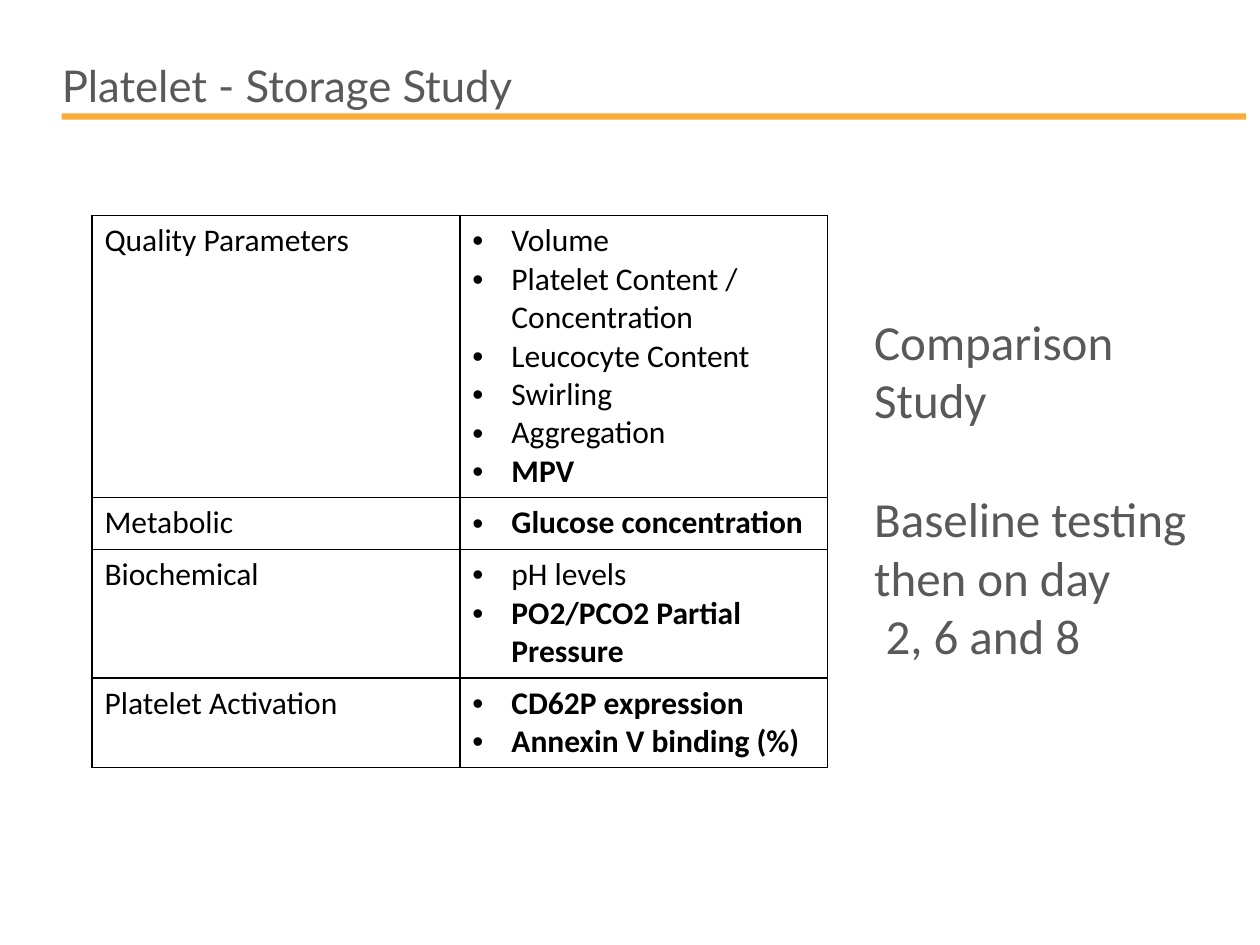
from lxml.etree import SubElement
from pptx import Presentation
from pptx.dml.color import RGBColor
from pptx.enum.shapes import MSO_SHAPE
from pptx.enum.text import MSO_ANCHOR, MSO_AUTO_SIZE, PP_ALIGN
from pptx.oxml.ns import qn
from pptx.util import Inches, Pt

BLACK = RGBColor(0x00, 0x00, 0x00)
GREY = RGBColor(0x59, 0x59, 0x59)
ORANGE = RGBColor(0xF8, 0xAC, 0x39)


def write(paragraph, text, size=18, font="Calibri", color=BLACK, bold=False,
          bullet=False, indent=0, before=0, spacing=None):
    props = paragraph._p.get_or_add_pPr()
    if bullet:
        props.set("marL", str(Inches(0.31)))
        props.set("indent", str(-Inches(0.31)))
        SubElement(props, qn("a:buFont"), typeface="Arial")
        SubElement(props, qn("a:buChar"), char="•")
    elif indent:
        props.set("marL", str(Inches(indent)))
    paragraph.alignment = PP_ALIGN.LEFT
    if before:
        paragraph.space_before = Pt(before)
    if spacing:
        paragraph.line_spacing = Pt(spacing)
    run = paragraph.add_run()
    run.text = text
    run.font.size = Pt(size)
    run.font.name = font
    run.font.bold = bold
    run.font.color.rgb = color


def outline(cell):
    """Give the cell no fill and a black 1 pt line on every side."""
    props = cell._tc.get_or_add_tcPr()
    for side in ("a:lnL", "a:lnR", "a:lnT", "a:lnB"):
        line = SubElement(props, qn(side), w=str(Pt(1)))
        fill = SubElement(line, qn("a:solidFill"))
        SubElement(fill, qn("a:srgbClr"), val=str(BLACK))
    cell.fill.background()


prs = Presentation()
prs.slide_width = Inches(10)
prs.slide_height = Inches(7.5)
slide = prs.slides.add_slide(prs.slide_layouts[5])

# Title and rule
title = slide.shapes.title
title.left, title.top = Inches(0.49), Inches(0.39)
title.width, title.height = Inches(8.74), Inches(0.45)
heading = title.text_frame
heading.auto_size = MSO_AUTO_SIZE.NONE
heading.vertical_anchor = MSO_ANCHOR.TOP
heading.margin_left = heading.margin_right = 0
heading.margin_top = heading.margin_bottom = 0
write(heading.paragraphs[0], "Platelet - Storage Study", size=25, font="Lato",
      color=GREY, spacing=35.3)

rule = slide.shapes.add_shape(MSO_SHAPE.RECTANGLE, Inches(0.49), Inches(0.9),
                              Inches(9.4), Inches(0.05))
rule.shadow.inherit = False
rule.fill.solid()
rule.fill.fore_color.rgb = ORANGE
rule.line.fill.background()

# Parameter table: category, row height, (measure, bold)
categories = [
    ("Quality Parameters", 2.24, [
        ("Volume", False), ("Platelet Content / Concentration", False),
        ("Leucocyte Content", False), ("Swirling", False),
        ("Aggregation", False), ("MPV", True)]),
    ("Metabolic", 0.41, [("Glucose concentration", True)]),
    ("Biochemical", 1.02, [
        ("pH levels", False), ("PO2/PCO2 Partial Pressure", True)]),
    ("Platelet Activation", 0.71, [
        ("CD62P expression", True), ("Annexin V binding (%)", True)]),
]
total_height = sum(height for _, height, _ in categories)
parameters = slide.shapes.add_table(
    len(categories), 2, Inches(0.73), Inches(1.71),
    Inches(5.84), Inches(total_height)).table
parameters.first_row = False
parameters.horz_banding = False

for row, (category, height, measures) in enumerate(categories):
    parameters.rows[row].height = Inches(height)
    category_cell = parameters.cell(row, 0)
    measure_cell = parameters.cell(row, 1)
    outline(category_cell)
    outline(measure_cell)
    write(category_cell.text_frame.paragraphs[0], category)
    frame = measure_cell.text_frame
    for i, (measure, bold) in enumerate(measures):
        paragraph = frame.add_paragraph() if i else frame.paragraphs[0]
        write(paragraph, measure, bold=bold, bullet=True)

# Study design beside the table
design = slide.shapes.add_textbox(Inches(6.84), Inches(2.42),
                                  Inches(3.07), Inches(2.93)).text_frame
design.word_wrap = True
write(design.paragraphs[0], "Comparison Study", size=28, color=GREY)
write(design.add_paragraph(), "Baseline testing then on day", size=28,
      color=GREY, before=34)
write(design.add_paragraph(), "2, 6 and 8", size=28, color=GREY, indent=0.09)

prs.save("out.pptx")
